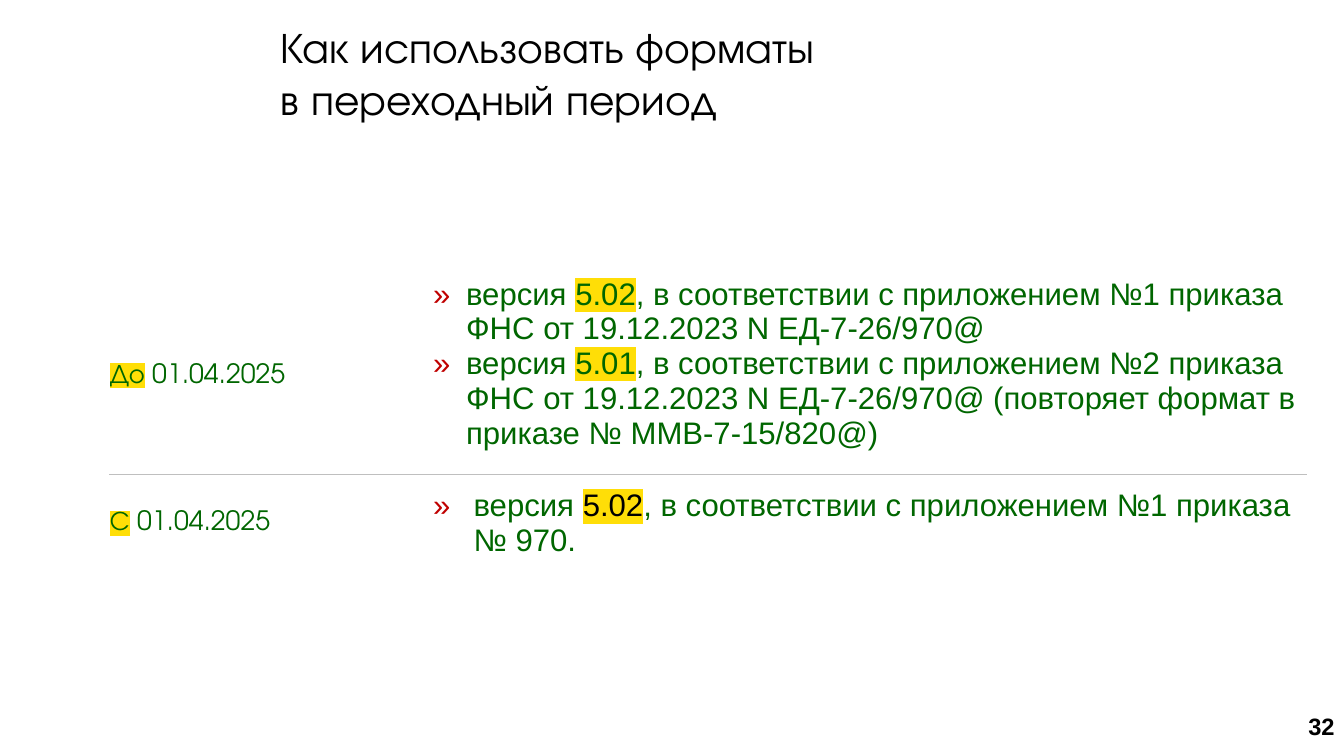
"""Builds the slide on using the formats in the transition period."""
import pptx
import pptx.util
import pptx.dml.color
import pptx.enum.text
import pptx.oxml
import pptx.oxml.ns
from dataclasses import dataclass
from lxml import etree


@dataclass
class Theme:
    ink: str = "000000"
    green: str = "006600"
    mark: str = "FFDE07"
    bullet: str = "C00000"
    rule: str = "BFBFBF"
    head: str = "TeX Gyre Adventor"
    body: str = "Arial"
    title: int = 29
    item: int = 21
    date: int = 18
    page: int = 16


theme = Theme()
deck = pptx.Presentation()
deck.slide_width = pptx.util.Inches(12.6)
deck.slide_height = pptx.util.Inches(7.09)
unit = deck.slide_width / 126
align = pptx.enum.text.PP_ALIGN
middle = pptx.enum.text.MSO_ANCHOR.MIDDLE


def grid(*steps):
    return [round(step * unit) for step in steps]


def style(font, face, size, tint, bold=False):
    font.name = face
    font.size = pptx.util.Pt(size)
    font.bold = bold
    font.color.rgb = pptx.dml.color.RGBColor.from_string(tint)


slide = deck.slides.add_slide(deck.slide_layouts[5])
title = slide.shapes.title
title.left, title.top, title.width, title.height = grid(25.3, 1.2, 97.3, 11.2)
frame = title.text_frame
frame.auto_size = pptx.enum.text.MSO_AUTO_SIZE.NONE
frame.vertical_anchor = middle
frame.text = "Как использовать форматы\vв переходный период"
frame.paragraphs[0].alignment = align.LEFT
style(frame.paragraphs[0].font, theme.head, theme.title, theme.ink)

page = slide.shapes.add_textbox(*grid(116, 66, 10.1, 3.9)).text_frame
page.word_wrap = True
page.text = "32"
page.paragraphs[0].alignment = align.RIGHT
page.paragraphs[0].line_spacing = 1.1
style(page.paragraphs[0].font, theme.body, theme.page, theme.ink, True)

rows = [
    ("*До* 01.04.2025", [
        "версия *5.02*, в соответствии с приложением №1 приказа "
        "ФНС от 19.12.2023 N ЕД-7-26/970@",
        "версия *5.01*, в соответствии с приложением №2 приказа "
        "ФНС от 19.12.2023 N ЕД-7-26/970@ (повторяет формат в "
        "приказе № ММВ-7-15/820@)",
    ], 18.5, 0, 3.1, theme.green),
    ("*С* 01.04.2025", [
        "версия *5.02*, в соответствии с приложением №1 приказа № 970.",
    ], 8.7, 1.1, 3.8, theme.ink),
]
table = slide.shapes.add_table(2, 2, *grid(10.3, 26, 112.2, 27.2)).table
table.first_row = table.horz_banding = False
for col, width in zip(table.columns, grid(29.1, 83.1)):
    col.width = width

ns = pptx.oxml.ns.nsdecls("a")
for r, (date, items, height, pad, dent, tint) in enumerate(rows):
    table.rows[r].height = grid(height)[0]
    for c, lines in enumerate(([date], items)):
        cell = table.cell(r, c)
        cell.margin_left, cell.margin_right = grid(1.2 * c, 0)
        cell.margin_top = cell.margin_bottom = grid(pad)[0]
        if r or not c:
            cell.vertical_anchor = middle
        face, size = (theme.body, theme.item) if c else (theme.head, theme.date)
        for n, line in enumerate(lines):
            text = cell.text_frame
            para = text.add_paragraph() if n else text.paragraphs[0]
            if c:
                props = para._p.get_or_add_pPr()
                step = grid(dent)[0]
                props.set("marL", str(step))
                props.set("indent", str(-step))
                for xml in (
                    f'<a:buClr {ns}><a:srgbClr val="{theme.bullet}"/></a:buClr>',
                    f'<a:buFont {ns} typeface="{theme.body}"/>',
                    f'<a:buChar {ns} char="»"/>',
                ):
                    props.append(pptx.oxml.parse_xml(xml))
            style(para.font, face, size, theme.green)
            for k, part in enumerate(line.split("*")):
                if not part:
                    continue
                run = para.add_run()
                run.text = part
                if k == 1:
                    shade = tint if c else theme.green
                    run.font.color.rgb = pptx.dml.color.RGBColor.from_string(shade)
                    run._r.get_or_add_rPr().append(pptx.oxml.parse_xml(
                        f'<a:highlight {ns}><a:srgbClr val="{theme.mark}"/>'
                        '</a:highlight>'))
        side = "lnT" if r else "lnB"
        cell._tc.get_or_add_tcPr().append(etree.fromstring(
            f'<a:{side} {ns} w="12700"><a:solidFill>'
            f'<a:srgbClr val="{theme.rule}"/></a:solidFill></a:{side}>'))
        cell.fill.background()

deck.save("out.pptx")
